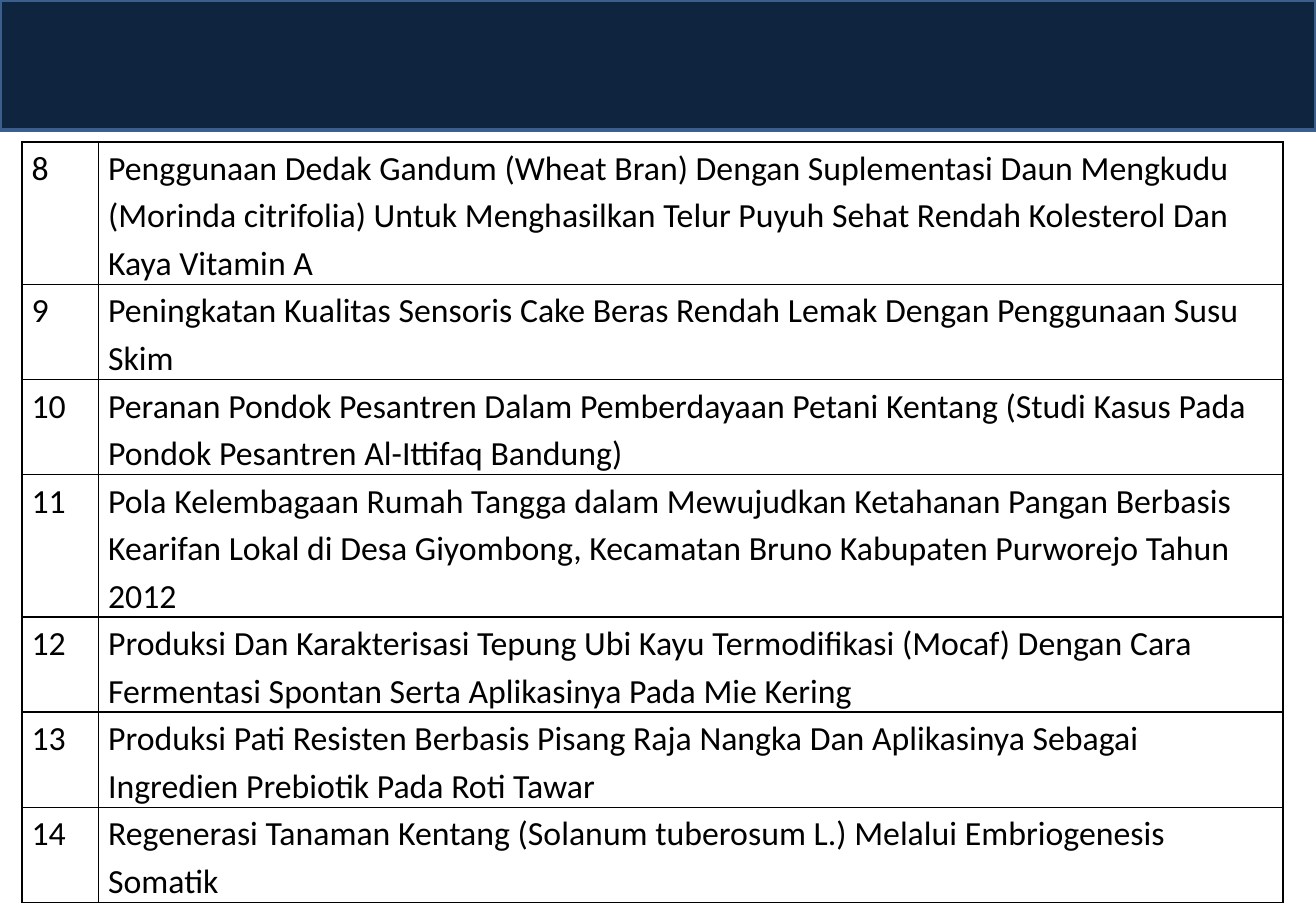
import lxml.etree
import pptx
import pptx.dml.color
import pptx.enum.shapes
import pptx.oxml.ns
import pptx.util

FIRST_NUMBER = 8
TITLES = [
    (1.01, "Penggunaan Dedak Gandum (Wheat Bran) Dengan Suplementasi Daun Mengkudu (Morinda citrifolia) Untuk Menghasilkan Telur Puyuh Sehat Rendah Kolesterol Dan Kaya Vitamin A"),
    (0.64, "Peningkatan Kualitas Sensoris Cake Beras Rendah Lemak Dengan Penggunaan Susu Skim"),
    (0.67, "Peranan Pondok Pesantren Dalam Pemberdayaan Petani Kentang (Studi Kasus Pada Pondok Pesantren Al-Ittifaq Bandung)"),
    (0.97, "Pola Kelembagaan Rumah Tangga dalam Mewujudkan Ketahanan Pangan Berbasis Kearifan Lokal di Desa Giyombong, Kecamatan Bruno Kabupaten Purworejo Tahun 2012"),
    (0.67, "Produksi Dan Karakterisasi Tepung Ubi Kayu Termodifikasi (Mocaf) Dengan Cara Fermentasi Spontan Serta Aplikasinya Pada Mie Kering"),
    (0.67, "Produksi Pati Resisten Berbasis Pisang Raja Nangka Dan Aplikasinya Sebagai Ingredien Prebiotik Pada Roti Tawar"),
    (0.64, "Regenerasi Tanaman Kentang (Solanum tuberosum L.) Melalui Embriogenesis Somatik"),
]
COLUMNS = [0.63, 9.75]
COLORS = {"band": "0F243E", "edge": "3A5F8C", "text": "000000", "grid": "000000"}

Inches = pptx.util.Inches
Pt = pptx.util.Pt


def rgb(name):
    return pptx.dml.color.RGBColor.from_string(COLORS[name])


def add_borders(cell):
    tc_pr = cell._tc.get_or_add_tcPr()
    for side in ("lnL", "lnR", "lnT", "lnB"):
        ln = lxml.etree.SubElement(tc_pr, pptx.oxml.ns.qn("a:" + side), w=str(Pt(1)))
        fill = lxml.etree.SubElement(ln, pptx.oxml.ns.qn("a:solidFill"))
        lxml.etree.SubElement(fill, pptx.oxml.ns.qn("a:srgbClr"), val=COLORS["grid"])


def fill_cell(cell, text):
    cell.margin_left = cell.margin_right = Inches(0.08)
    cell.margin_top = cell.margin_bottom = 0
    add_borders(cell)
    cell.fill.background()
    p = cell.text_frame.paragraphs[0]
    p.line_spacing = 1.15
    r = p.add_run()
    r.text = text
    r.font.name = "Calibri"
    r.font.size = Pt(20)
    r.font.color.rgb = rgb("text")


prs = pptx.Presentation()
prs.slide_width = Inches(10.83)
prs.slide_height = Inches(7.5)
s = prs.slides.add_slide(prs.slide_layouts[6])

band = s.shapes.add_shape(
    pptx.enum.shapes.MSO_SHAPE.RECTANGLE, 0, 0, prs.slide_width, Inches(1.07))
band.shadow.inherit = False
band.fill.solid()
band.fill.fore_color.rgb = rgb("band")
band.line.color.rgb = rgb("edge")
band.line.width = Pt(2)

height = sum(h for h, title in TITLES)
table = s.shapes.add_table(
    len(TITLES), len(COLUMNS), Inches(0.18), Inches(1.17),
    Inches(sum(COLUMNS)), Inches(height)).table
table.first_row = table.horz_banding = False
for column, width in zip(table.columns, COLUMNS):
    column.width = Inches(width)
for i, (row_height, title) in enumerate(TITLES):
    table.rows[i].height = Inches(row_height)
    for j, text in enumerate((str(FIRST_NUMBER + i), title)):
        fill_cell(table.cell(i, j), text)

prs.save("out.pptx")
